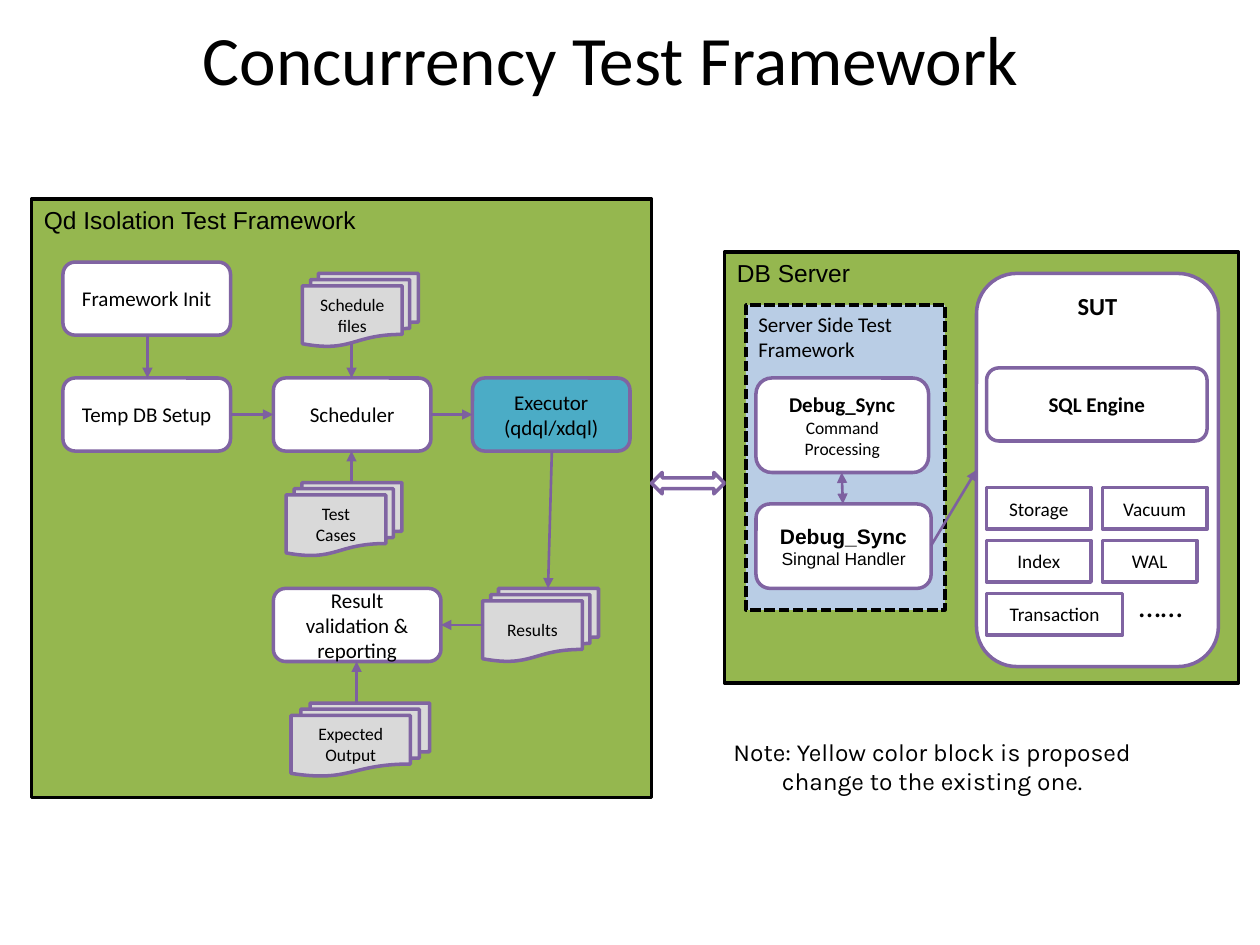
from pptx import Presentation
from pptx import util as u
from pptx.dml.color import RGBColor
from pptx.enum import dml, shapes, text
from pptx.oxml.ns import qn
from lxml import etree

COLORS = {"ink": "000000", "white": "FFFFFF", "green": "95B74F", "purple": "8064A2",
          "arrow": "7D60A0", "teal": "4BACC6", "grey": "D9D9D9", "blue": "B9CDE5"}
S = shapes.MSO_SHAPE
ROUND, RECT, DOCS = S.ROUNDED_RECTANGLE, S.RECTANGLE, S.FLOWCHART_MULTIDOCUMENT
TOP, MIDDLE = text.MSO_ANCHOR.TOP, text.MSO_ANCHOR.MIDDLE
LEFT, CENTER = text.PP_ALIGN.LEFT, text.PP_ALIGN.CENTER
BOX_H, DOC_W, MODULE_H = 0.58, 0.92, 0.33


def rgb(name):
    return RGBColor.from_string(COLORS[name])


def write(sp, lines, anchor=MIDDLE, align=CENTER, font="Calibri"):
    """Fill a shape with lines given as (text, size, bold)."""
    tf = sp.text_frame
    tf.word_wrap = True
    tf.vertical_anchor = anchor
    for i, (words, size, bold) in enumerate(lines):
        p = tf.add_paragraph() if i else tf.paragraphs[0]
        p.text = words
        p.alignment = align
        p.font.name, p.font.size, p.font.bold = font, u.Pt(size), bold
        p.font.color.rgb = rgb("ink")


def add_box(s, kind, box, lines=(), fill="white", line="purple", **style):
    sp = s.shapes.add_shape(kind, *map(u.Inches, box))
    sp.shadow.inherit = False
    sp.fill.solid()
    sp.fill.fore_color.rgb = rgb(fill)
    sp.line.color.rgb = rgb(line)
    sp.line.width = u.Pt(2)
    if lines:
        write(sp, lines, **style)
    return sp


def add_label(s, box, words, size, **style):
    sp = s.shapes.add_textbox(*map(u.Inches, box))
    write(sp, [(words, size, False)], **style)
    return sp


def add_arrow(s, start, end, both=False):
    c = s.shapes.add_connector(shapes.MSO_CONNECTOR.STRAIGHT,
                               *map(u.Inches, (*start, *end)))
    c.line.color.rgb = rgb("arrow")
    c.line.width = u.Pt(1.5)
    ln = c.line._get_or_add_ln()
    for tag in ("a:headEnd", "a:tailEnd") if both else ("a:tailEnd",):
        etree.SubElement(ln, qn(tag), type="triangle")
    etree.SubElement(c._element.spPr, qn("a:effectLst"))


def add_panel(s, box, title):
    add_box(s, RECT, box, [(title, 14, False)], fill="green", line="ink",
            anchor=TOP, align=LEFT, font="Arial")


def isolation_framework(s, box):
    x, y = box[:2]
    add_panel(s, box, "Qd Isolation Test Framework")

    # Process steps: left, top, width
    for dx, dy, w, words, fill in (
            (0.25, 0.5, 1.33, "Framework Init", "white"),
            (0.25, 1.42, 1.33, "Temp DB Setup", "white"),
            (1.92, 1.42, 1.25, "Scheduler", "white"),
            (3.5, 1.42, 1.25, "Executor (qdql/xdql)", "teal"),
            (1.92, 3.09, 1.33, "Result validation & reporting", "white")):
        add_box(s, ROUND, (x + dx, y + dy, w, BOX_H), [(words, 12, False)], fill=fill)

    # Document stacks
    for dx, dy, w, lines in (
            (2.15, 0.59, DOC_W, ["Schedule files"]),
            (2.02, 2.25, DOC_W, ["Test", "Cases"]),
            (3.58, 3.09, DOC_W, ["Results"]),
            (2.06, 4.0, 1.1, ["Expected Output"])):
        add_box(s, DOCS, (x + dx, y + dy, w, BOX_H),
                [(words, 10, False) for words in lines], fill="grey")

    # Flow between steps and documents
    for x1, y1, x2, y2 in (
            (0.92, 1.09, 0.92, 1.42), (1.58, 1.71, 1.92, 1.71),
            (3.17, 1.71, 3.5, 1.71), (2.54, 1.15, 2.54, 1.42),
            (2.54, 2.25, 2.54, 2.0), (4.13, 2.0, 4.1, 3.09),
            (3.58, 3.38, 3.25, 3.38), (2.58, 4.0, 2.58, 3.67)):
        add_arrow(s, (x + x1, y + y1), (x + x2, y + y2))


def server_side(s, box):
    x, y = box[:2]
    frame = add_box(s, RECT, box, [("Server Side Test Framework", 12, False)],
                    fill="blue", line="ink", anchor=TOP, align=LEFT)
    frame.line.dash_style = dml.MSO_LINE.SQUARE_DOT

    for dy, w, h, role, font in ((0.58, 1.37, 0.75, "Command Processing", "Calibri"),
                                 (1.58, 1.39, 0.67, "Singnal Handler", "Arial")):
        add_box(s, ROUND, (x + 0.08, y + dy, w, h),
                [("Debug_Sync", 12, True), (role, 10, False)], font=font)
    add_arrow(s, (x + 0.77, y + 1.58), (x + 0.76, y + 1.33), both=True)


def system_under_test(s, box):
    x, y = box[:2]
    add_box(s, ROUND, box, [("SUT", 14, True)], anchor=TOP)
    add_box(s, ROUND, (x + 0.08, y + 0.75, 1.75, BOX_H), [("SQL Engine", 12, True)])

    # Engine modules in rows of two
    rows = ((("Storage", 0.83), ("Vacuum", 0.83)),
            (("Index", 0.83), ("WAL", 0.75)),
            (("Transaction", 1.08),))
    for i, row in enumerate(rows):
        for j, (words, w) in enumerate(row):
            add_box(s, RECT, (x + 0.08 + 0.92 * j, y + 1.7 + 0.42 * i, w, MODULE_H),
                    [(words, 11, False)])
    dots = add_label(s, (x + 1.19, y + 2.43, 0.56, 0.4), "……", 18, anchor=TOP, align=LEFT)
    dots.text_frame.word_wrap = False


def db_server(s, box):
    x, y = box[:2]
    add_panel(s, box, "DB Server")
    server_side(s, (x + 0.17, y + 0.42, 1.58, 2.42))
    system_under_test(s, (x + 2.0, y + 0.17, 1.92, 3.12))
    add_arrow(s, (x + 1.64, y + 2.33), (x + 2.0, y + 1.73))


def main():
    prs = Presentation()
    prs.slide_width, prs.slide_height = u.Inches(10), u.Inches(7.5)
    s = prs.slides.add_slide(prs.slide_layouts[6])

    add_label(s, (0.67, 0.17, 8.35, 0.58), "Concurrency Test Framework", 39.6)
    isolation_framework(s, (0.25, 1.58, 4.92, 4.75))
    db_server(s, (5.75, 2, 4.08, 3.42))

    # Link between the two panels, and the note
    add_box(s, S.LEFT_RIGHT_ARROW, (5.17, 3.75, 0.58, 0.17))
    add_label(s, (5.47, 5.8, 3.86, 0.57),
              "Note: Yellow color block is proposed change to the existing one.",
              14, anchor=TOP, font="Karla")
    prs.save("out.pptx")


if __name__ == "__main__":
    main()
